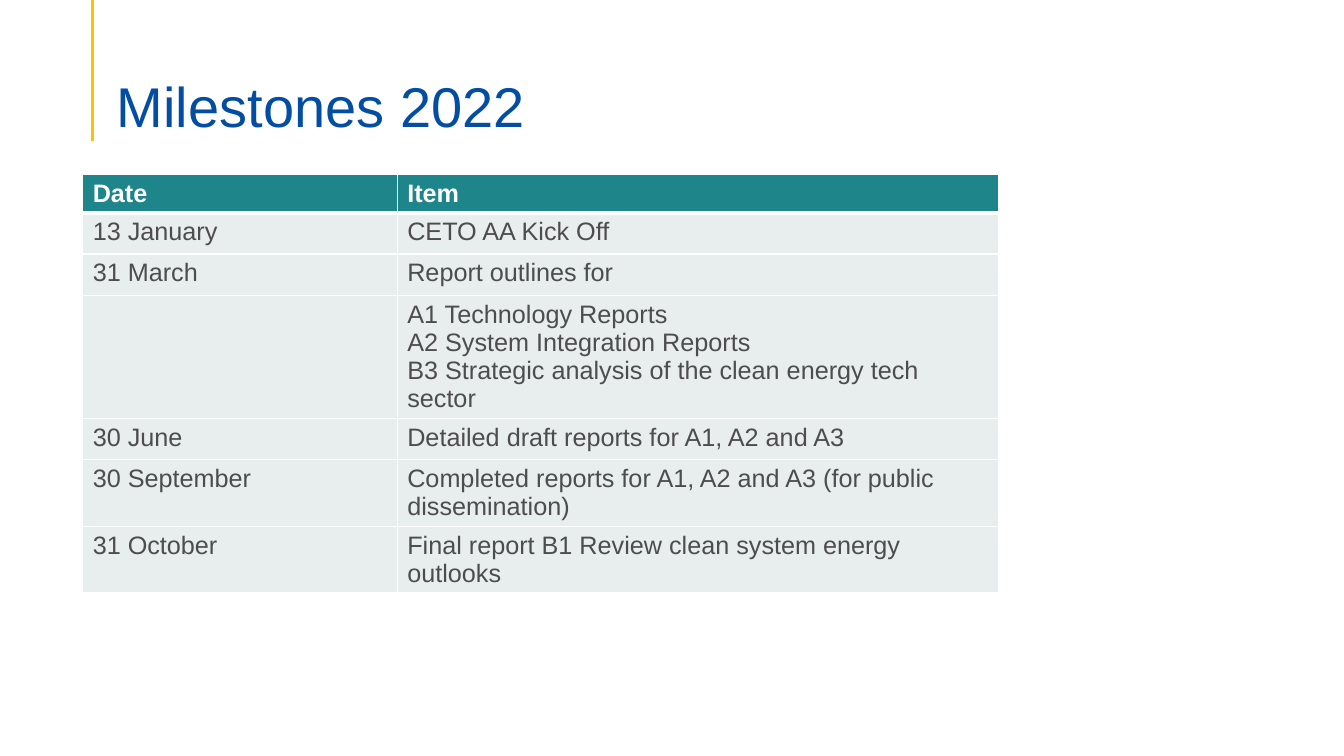
"""Build the Milestones 2022 slide with its table of dates."""
from lxml.etree import SubElement
from pptx import Presentation
from pptx.dml.color import RGBColor
from pptx.enum.shapes import MSO_CONNECTOR
from pptx.enum.text import MSO_ANCHOR, PP_ALIGN
from pptx.oxml.ns import qn
from pptx.util import Inches, Pt

BLUE = RGBColor(0x03, 0x4E, 0xA2)
GOLD = RGBColor(0xFF, 0xC0, 0x00)
TEAL = RGBColor(0x1E, 0x85, 0x8B)
PALE = RGBColor(0xE8, 0xED, 0xEE)
GREY = RGBColor(0x4D, 0x4D, 0x4D)
WHITE = RGBColor(0xFF, 0xFF, 0xFF)

ROWS = [
    ("Date", "Item"),
    ("13 January", "CETO AA Kick Off"),
    ("31 March", "Report outlines for"),
    ("", "A1 Technology Reports\nA2 System Integration Reports\n"
         "B3 Strategic analysis of the clean energy tech sector"),
    ("30 June", "Detailed draft reports for A1, A2 and A3"),
    ("30 September",
     "Completed reports for A1, A2 and A3 (for public dissemination)"),
    ("31 October", "Final report B1 Review clean system energy outlooks"),
]


def style(text, size, color, bold=False):
    look = {"name": "Arial", "size": Pt(size), "bold": bold}
    for para in text.paragraphs:
        for key, value in look.items():
            setattr(para.font, key, value)
        para.font.color.rgb = color


def edge(cell, side, width):
    line = SubElement(cell._tc.get_or_add_tcPr(), qn(f"a:ln{side}"),
                      w=str(Pt(width)))
    fill = SubElement(line, qn("a:solidFill"))
    SubElement(fill, qn("a:srgbClr"), val=str(WHITE))


deck = Presentation()
deck.slide_width, deck.slide_height = Inches(13.33), Inches(7.5)
slide = deck.slides.add_slide(deck.slide_layouts[5])

rule = slide.shapes.add_connector(
    MSO_CONNECTOR.STRAIGHT, Inches(0.92), 0, Inches(0.92), Inches(1.4))
rule.line.color.rgb = GOLD
rule.line.width = Pt(2.25)
SubElement(rule._element.spPr, qn("a:effectLst"))

title = slide.shapes.title
place = {"left": 1.06, "top": 0.53, "width": 12.14, "height": 0.86}
for key, value in place.items():
    setattr(title, key, Inches(value))
frame = title.text_frame
frame.text = "Milestones 2022"
layout = {"vertical_anchor": MSO_ANCHOR.BOTTOM, "word_wrap": True,
          "margin_left": Inches(0.1), "margin_right": Inches(0.1),
          "margin_top": Inches(0.05), "margin_bottom": 0}
for key, value in layout.items():
    setattr(frame, key, value)
frame.paragraphs[0].alignment = PP_ALIGN.LEFT
frame.paragraphs[0].line_spacing = 0.9
style(frame, 40, BLUE)

table = slide.shapes.add_table(
    len(ROWS), 2, Inches(0.82), Inches(1.73), Inches(9.08),
    Inches(2.78)).table
table.horz_banding = False
for column, width in zip(table.columns, (3.12, 5.96)):
    column.width = Inches(width)

for r, texts in enumerate(ROWS):
    head = r == 0
    table.rows[r].height = Inches(0.32 if head else 0.41)
    for c, text in enumerate(texts):
        cell = table.cell(r, c)
        cell.text = text
        style(cell.text_frame, 18, WHITE if head else GREY, head)
        for side in "LRTB":
            thick = (head and side == "B") or (r == 1 and side == "T")
            edge(cell, side, 3 if thick else 1)
        cell.fill.solid()
        cell.fill.fore_color.rgb = TEAL if head else PALE

deck.save("out.pptx")
